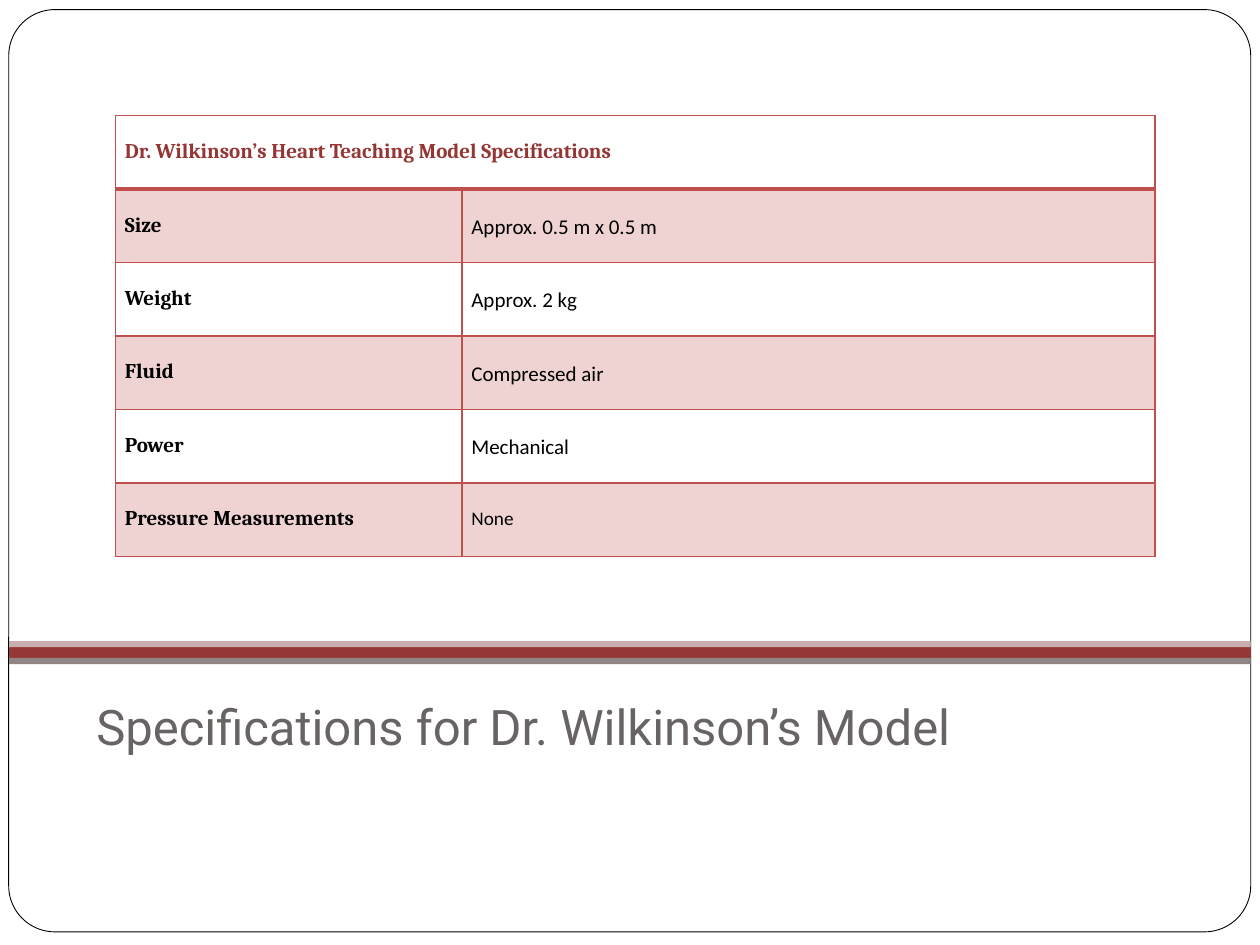
import pptx
import pptx.util
import pptx.dml.color
import pptx.enum.shapes
import pptx.enum.text
import pptx.oxml
import pptx.oxml.ns

Pt = pptx.util.Pt


def color(hex_string):
    return pptx.dml.color.RGBColor.from_string(hex_string)


def write_text(paragraph, text, *, font, size, fill, bold=False, spacing=1.0):
    paragraph.line_spacing = spacing
    run = paragraph.add_run()
    run.text = text
    run.font.name = font
    run.font.size = Pt(size)
    run.font.bold = bold
    run.font.color.rgb = color(fill)


presentation = pptx.Presentation()
presentation.slide_width = Pt(720)
presentation.slide_height = Pt(540)
slide = presentation.slides.add_slide(presentation.slide_layouts[6])

shape_kinds = pptx.enum.shapes.MSO_SHAPE
frame = slide.shapes.add_shape(shape_kinds.ROUNDED_RECTANGLE, Pt(5), Pt(5.5), Pt(709.7), Pt(527))
frame.adjustments[0] = 0.05
frame.shadow.inherit = False
frame.fill.solid()
frame.fill.fore_color.rgb = color("FFFFFF")
frame.line.color.rgb = color("000000")
frame.line.width = Pt(0.5)

bands = [(369, 7, "953735"), (366.3, 3.5, "C8AEAE"), (376, 3.5, "918485")]
for top, height, fill in bands:
    band = slide.shapes.add_shape(shape_kinds.RECTANGLE, Pt(5.2), Pt(top), Pt(709.5), Pt(height))
    band.shadow.inherit = False
    band.fill.solid()
    band.fill.fore_color.rgb = color(fill)
    band.line.fill.background()

title = slide.shapes.add_textbox(Pt(48), Pt(396), Pt(576), Pt(41))
title.text_frame.word_wrap = True
title.text_frame.vertical_anchor = pptx.enum.text.MSO_ANCHOR.MIDDLE
title.text_frame.margin_bottom = Pt(7.2)
write_text(title.text_frame.paragraphs[0], "Specifications for Dr. Wilkinson’s Model",
           font="Roboto", size=28, fill="696464")

specifications = [
    ("Dr. Wilkinson’s Heart Teaching Model Specifications",),
    ("Size", "Approx. 0.5 m x 0.5 m"),
    ("Weight", "Approx. 2 kg"),
    ("Fluid", "Compressed air"),
    ("Power", "Mechanical"),
    ("Pressure Measurements", "None"),
]
table = slide.shapes.add_table(len(specifications), 2, Pt(66), Pt(66), Pt(594), Pt(252)).table
table.first_row = False
table.horz_banding = False
table.columns[0].width = Pt(198)
table.columns[1].width = Pt(396)
table.cell(0, 0).merge(table.cell(0, 1))

for row_index, row in enumerate(table.rows):
    row.height = Pt(42)
    for cell in row.cells:
        properties = cell._tc.get_or_add_tcPr()
        for side in "LRTB":
            is_header_rule = (row_index, side) in [(0, "B"), (1, "T")]
            width = Pt(2.25 if is_header_rule else 1)
            properties.append(pptx.oxml.parse_xml(
                f'<a:ln{side} {pptx.oxml.ns.nsdecls("a")} w="{width}"><a:solidFill>'
                f'<a:srgbClr val="C0504D"/></a:solidFill></a:ln{side}>'))
        if row_index % 2:
            cell.fill.solid()
            cell.fill.fore_color.rgb = color("EFD3D2")
        else:
            cell.fill.background()
        cell.margin_left = cell.margin_right = Pt(5.4)
        cell.margin_top = cell.margin_bottom = Pt(0)
    for column_index, text in enumerate(specifications[row_index]):
        is_label = column_index == 0
        write_text(table.cell(row_index, column_index).text_frame.paragraphs[0], text,
                   font="Cambria" if is_label else "Calibri", size=11 if text == "None" else 12,
                   fill="000000" if row_index else "943634", bold=is_label, spacing=2.0)

presentation.save("out.pptx")
